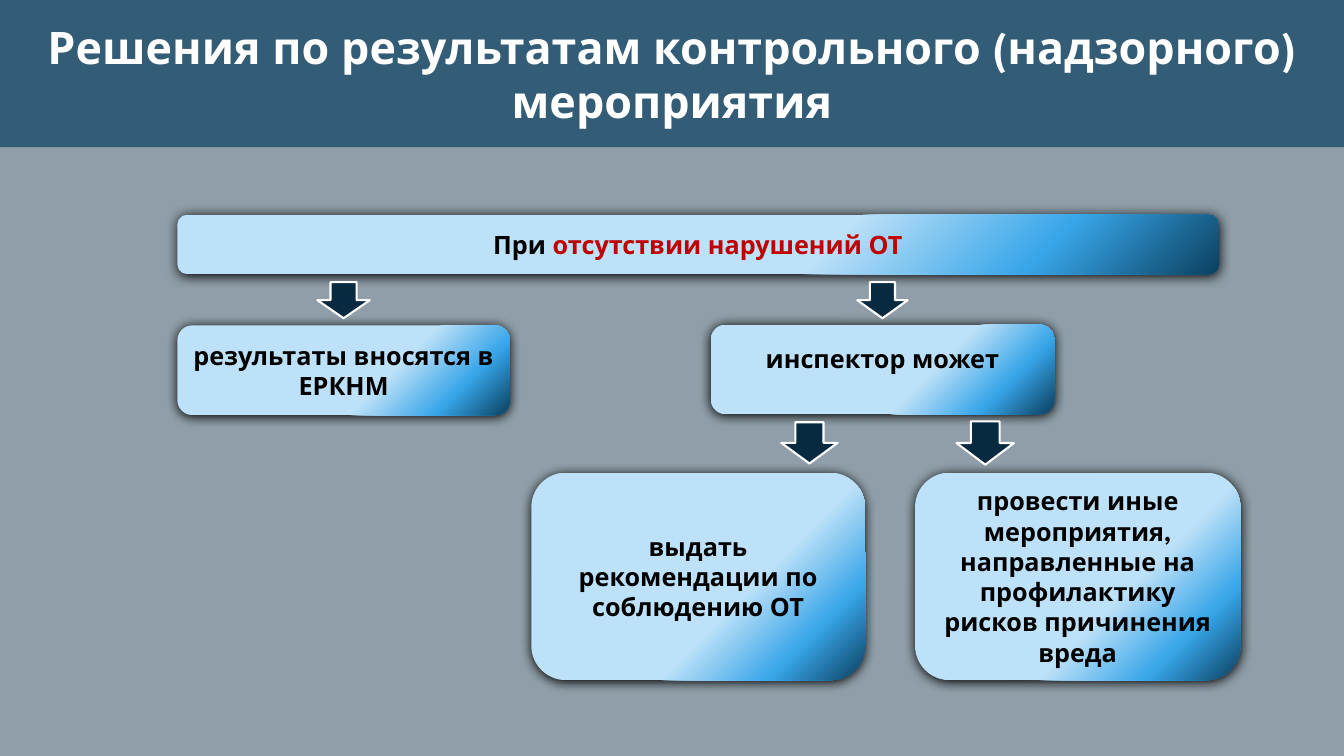
from lxml import etree
from pptx import Presentation
from pptx.dml.color import RGBColor
from pptx.enum.shapes import MSO_SHAPE
from pptx.enum.text import MSO_ANCHOR, PP_ALIGN
from pptx.oxml.ns import qn
from pptx.util import Cm, Pt

RECT = MSO_SHAPE.RECTANGLE
ROUNDED = MSO_SHAPE.ROUNDED_RECTANGLE
DOWN_ARROW = MSO_SHAPE.DOWN_ARROW
MIDDLE, TOP = MSO_ANCHOR.MIDDLE, MSO_ANCHOR.TOP
CENTER = PP_ALIGN.CENTER

THEME = {
    "font": "League Spartan",
    "title_size": 32,
    "body_size": 18,
    "navy": "072A40",
    "header": "0B4060",
    "white": "FFFFFF",
    "black": "000000",
    "red": "C00000",
    "gradient": [(62, "BDE1F8"), (82, "38A6E9"), (100, "0B4060")],
    "background_alpha": 45,
    "header_alpha": 69,
}

SLIDE_SIZE = (33.87, 19.05)
TITLE = "Решения по результатам контрольного (надзорного) мероприятия"
TITLE_HEIGHT = 3.71

DECISIONS = [
    ((4.47, 5.41, 26.24, 1.5),
     [("При ", "black"), ("отсутствии нарушений ОТ", "red")], MIDDLE),
    ((17.91, 8.18, 8.66, 2.26), [("инспектор может", "black")], TOP),
    ((4.47, 8.2, 8.38, 2.26), [("результаты вносятся в ЕРКНМ", "black")], MIDDLE),
    ((23.06, 11.91, 8.2, 5.23),
     [("провести иные мероприятия, направленные на профилактику "
       "рисков причинения вреда", "black")], MIDDLE),
    ((13.39, 11.91, 8.41, 5.23),
     [("выдать рекомендации по соблюдению ОТ", "black")], MIDDLE),
]
TOP_INSET = 0.35

ARROWS = [
    (8.66, 7.11, 1.32, 0.91),
    (22.24, 7.11, 1.27, 0.91),
    (20.4, 10.64, 1.42, 1.04),
    (24.83, 10.62, 1.45, 1.09),
]


def add_shape(slide, kind, box, color):
    shape = slide.shapes.add_shape(kind, *map(Cm, box))
    shape.shadow.inherit = False
    shape.fill.solid()
    shape.fill.fore_color.rgb = RGBColor.from_string(color)
    shape.line.fill.background()
    return shape


def add_color(parent, color, alpha=100):
    node = etree.SubElement(parent, qn("a:srgbClr"), val=color)
    if alpha < 100:
        etree.SubElement(node, qn("a:alpha"), val=str(alpha * 1000))


def set_alpha(properties, color, alpha):
    solid = properties.find(qn("a:solidFill"))
    solid.remove(solid[0])
    add_color(solid, color, alpha)


def set_gradient(shape):
    properties = shape._element.spPr
    solid = properties.find(qn("a:solidFill"))
    gradient = etree.Element(qn("a:gradFill"), rotWithShape="1")
    stops = etree.SubElement(gradient, qn("a:gsLst"))
    for position, color in THEME["gradient"]:
        add_color(etree.SubElement(stops, qn("a:gs"), pos=str(position * 1000)), color)
    etree.SubElement(gradient, qn("a:lin"), ang=str(45 * 60000), scaled="0")
    properties.replace(solid, gradient)


def set_shadow(shape):
    effects = shape._element.spPr.find(qn("a:effectLst"))
    shadow = etree.SubElement(
        effects, qn("a:outerShdw"), blurRad=str(Pt(8.5)), dist=str(Pt(1)),
        dir=str(90 * 60000), algn="ctr", rotWithShape="0")
    add_color(shadow, THEME["black"])


def write_text(shape, parts, size, anchor):
    frame = shape.text_frame
    frame.word_wrap = True
    frame.vertical_anchor = anchor
    paragraph = frame.paragraphs[0]
    paragraph.alignment = CENTER
    font_format = {"name": THEME["font"], "size": Pt(size), "bold": True}
    for text, color in parts:
        run = paragraph.add_run()
        run.text = text
        for attribute, value in font_format.items():
            setattr(run.font, attribute, value)
        run.font.color.rgb = RGBColor.from_string(THEME[color])


def add_header(slide):
    header = add_shape(slide, RECT, (0, 0, SLIDE_SIZE[0], TITLE_HEIGHT), THEME["header"])
    set_alpha(header._element.spPr, THEME["header"], THEME["header_alpha"])
    write_text(header, [(TITLE, "white")], THEME["title_size"], MIDDLE)


def add_decision(slide, box, parts, anchor):
    decision = add_shape(slide, ROUNDED, box, THEME["header"])
    set_gradient(decision)
    set_shadow(decision)
    write_text(decision, parts, THEME["body_size"], anchor)
    if anchor == TOP:
        decision.text_frame.margin_top = Cm(TOP_INSET)


def add_arrow(slide, center, top, width, height):
    arrow = add_shape(slide, DOWN_ARROW, (center - width / 2, top, width, height), THEME["navy"])
    arrow.line.color.rgb = RGBColor.from_string(THEME["white"])
    arrow.line.width = Pt(1.5)


def main():
    deck = Presentation()
    deck.slide_width, deck.slide_height = map(Cm, SLIDE_SIZE)
    slide = deck.slides.add_slide(deck.slide_layouts[6])
    background = slide.background.fill
    background.solid()
    background.fore_color.rgb = RGBColor.from_string(THEME["navy"])
    set_alpha(slide._element.cSld.bg.bgPr, THEME["navy"], THEME["background_alpha"])
    add_header(slide)
    for box, parts, anchor in DECISIONS:
        add_decision(slide, box, parts, anchor)
    for arrow in ARROWS:
        add_arrow(slide, *arrow)
    deck.save("out.pptx")


if __name__ == "__main__":
    main()
